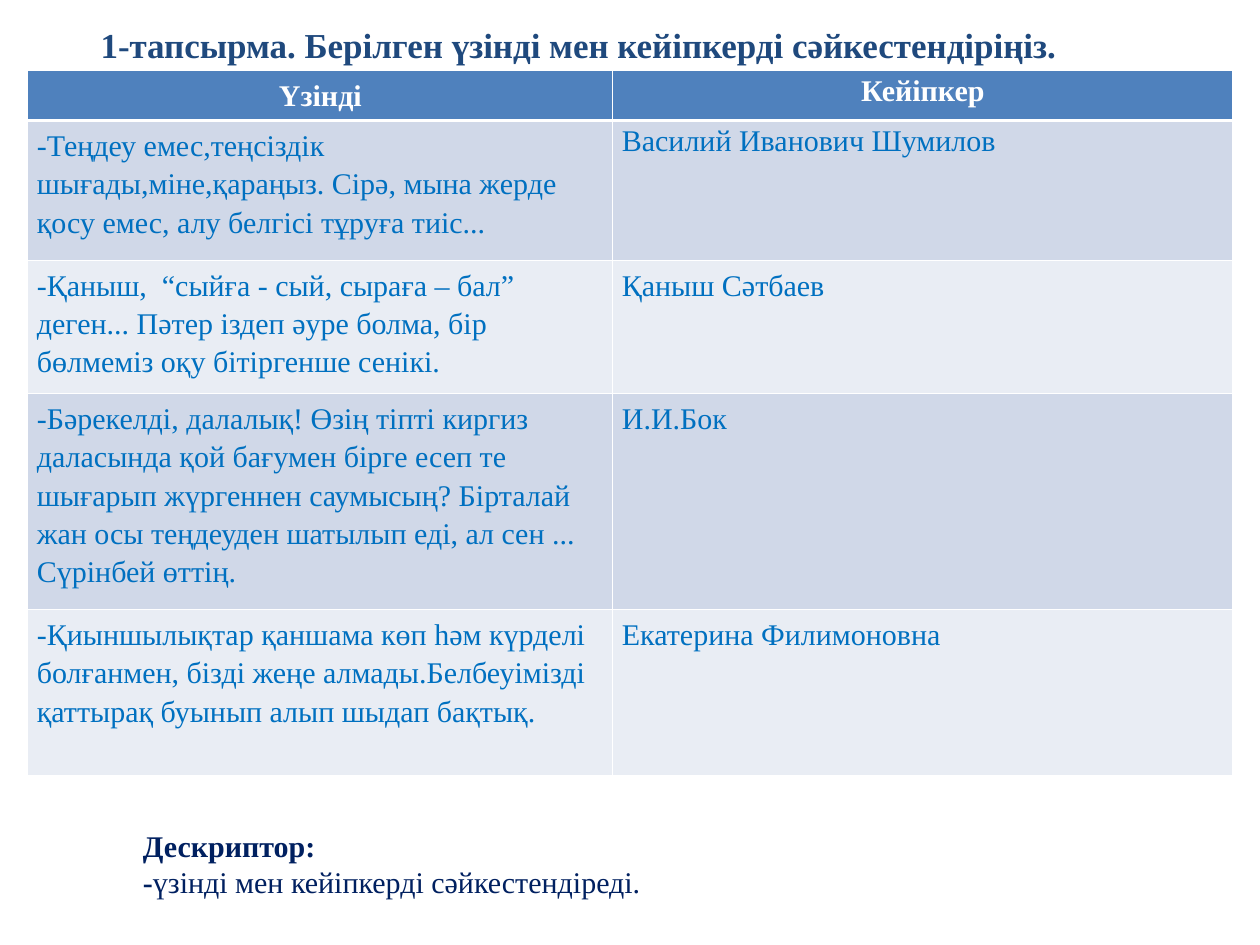
import pptx
import pptx.dml.color
import pptx.enum.text
import pptx.oxml
import pptx.oxml.ns
import pptx.util

Pt = pptx.util.Pt


def color(value):
    return pptx.dml.color.RGBColor.from_string(value)


def format_runs(paragraph, size, value, bold):
    for run in paragraph.runs:
        run.font.name = "Times New Roman"
        run.font.size = Pt(size)
        run.font.bold = bold
        run.font.color.rgb = color(value)


presentation = pptx.Presentation()
presentation.slide_width = Pt(1008)
presentation.slide_height = Pt(756)
slide = presentation.slides.add_slide(presentation.slide_layouts[6])

# Title
title = slide.shapes.add_textbox(Pt(73.4), Pt(15.1), Pt(873.4), Pt(41))
title.text_frame.word_wrap = True
title.text_frame.text = "1-тапсырма. Берілген үзінді мен кейіпкерді сәйкестендіріңіз."
format_runs(title.text_frame.paragraphs[0], 28, "1F497D", True)

# Table of excerpts and characters
rows = [
    ("Үзінді", "Кейіпкер"),
    ("-Теңдеу емес,теңсіздік шығады,міне,қараңыз. Сірә, мына жерде қосу емес, "
     "алу белгісі тұруға тиіс...", "Василий Иванович Шумилов"),
    ("-Қаныш,  “сыйға - сый, сыраға – бал” деген... Пәтер іздеп әуре болма, "
     "бір бөлмеміз оқу бітіргенше сенікі.", "Қаныш Сәтбаев"),
    ("-Бәрекелді, далалық! Өзің тіпті киргиз даласында қой бағумен бірге есеп те "
     "шығарып жүргеннен саумысың? Бірталай жан осы теңдеуден шатылып еді, "
     "ал сен ... Сүрінбей өттің.", "И.И.Бок"),
    ("-Қиыншылықтар қаншама көп һәм күрделі болғанмен, бізді жеңе алмады."
     "Белбеуімізді қаттырақ буынып алып шыдап бақтық.", "Екатерина Филимоновна"),
]
column_widths = [468, 496]
row_heights = [40, 111.6, 106.8, 172.4, 132.8]
table = slide.shapes.add_table(
    len(rows), len(column_widths), Pt(22.3), Pt(56.2),
    Pt(sum(column_widths)), Pt(sum(row_heights))).table
for column, width in zip(table.columns, column_widths):
    column.width = Pt(width)
for row, height in zip(table.rows, row_heights):
    row.height = Pt(height)

for row_index, texts in enumerate(rows):
    header = row_index == 0
    fill = "4F81BD" if header else ("E9EDF4", "D0D8E8")[row_index % 2]
    for column_index, text in enumerate(texts):
        cell = table.cell(row_index, column_index)
        cell.text = text
        paragraph = cell.text_frame.paragraphs[0]
        format_runs(paragraph, 24, "FFFFFF" if header else "0070C0", header)
        if header:
            paragraph.alignment = pptx.enum.text.PP_ALIGN.CENTER
        # The right column is single spaced in its first two rows
        if column_index == 0 or row_index > 1:
            paragraph.line_spacing = 1.15
            paragraph.space_after = Pt(10)

        # White borders, thicker under the header
        thick_side = {0: "B", 1: "T"}.get(row_index)
        properties = cell._tc.get_or_add_tcPr()
        for side in "LRTB":
            width = Pt(3 if side == thick_side else 1)
            properties.append(pptx.oxml.parse_xml(
                f'<a:ln{side} {pptx.oxml.ns.nsdecls("a")} w="{width}"><a:solidFill>'
                f'<a:srgbClr val="FFFFFF"/></a:solidFill></a:ln{side}>'))
        cell.fill.solid()
        cell.fill.fore_color.rgb = color(fill)

# Descriptor
descriptor = slide.shapes.add_textbox(Pt(107.3), Pt(658.8), Pt(504), Pt(65.4))
descriptor.text_frame.word_wrap = True
paragraph = descriptor.text_frame.paragraphs[0]
paragraph.text = "Дескриптор:\v-"
paragraph.add_run().text = "үзінді мен кейіпкерді сәйкестендіреді."
format_runs(paragraph, 24, "002060", True)
paragraph.runs[-1].font.bold = False

presentation.save("out.pptx")
